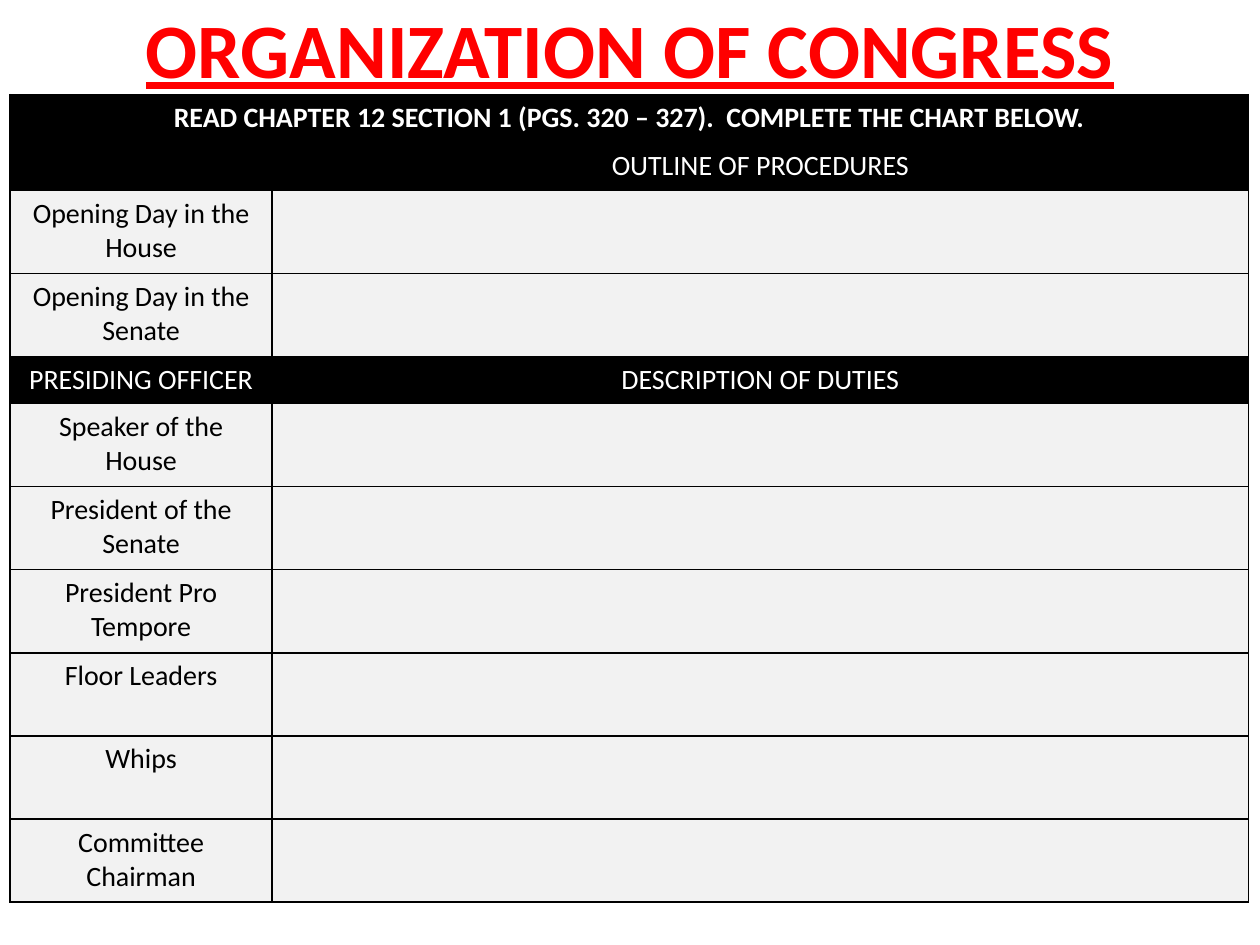
"""Build the Organization of Congress worksheet slide."""
from lxml.etree import SubElement as Sub
from pptx import Presentation
from pptx.dml.color import RGBColor
from pptx.enum.text import MSO_ANCHOR as Anchor, PP_ALIGN as Align
from pptx.oxml.ns import qn
from pptx.util import Inches, Pt


def style(par, size, color, bold):
    """Centre a paragraph and set its font."""
    par.alignment = Align.CENTER
    font = par.font
    font.name, font.size, font.bold = "Calibri", Pt(size), bold
    font.color.rgb = RGBColor.from_string(color)


def border(cell, color):
    """Draw a one-point line on each side of a cell."""
    props = cell._tc.get_or_add_tcPr()
    for side in ("lnL", "lnR", "lnT", "lnB"):
        line = Sub(props, qn(f"a:{side}"), w=str(Pt(1)))
        fill = Sub(line, qn("a:solidFill"))
        Sub(fill, qn("a:srgbClr"), val=color)


BLACK, WHITE, GRAY, RED = "000000", "FFFFFF", "F2F2F2", "FF0000"

deck = Presentation()
deck.slide_width, deck.slide_height = Inches(10), Inches(7.5)
slide = deck.slides.add_slide(deck.slide_layouts[5])

title = slide.shapes.title
title.left, title.top = Inches(0), Inches(0)
title.width, title.height = Inches(10), Inches(0.75)
frame = title.text_frame
frame.text = "ORGANIZATION OF CONGRESS"
frame.vertical_anchor = Anchor.MIDDLE
style(frame.paragraphs[0], 44, RED, True)
frame.paragraphs[0].font.underline = True

rows = [
    ("READ CHAPTER 12 SECTION 1 (PGS. 320 – 327).  COMPLETE THE CHART BELOW.", ""),
    ("", "OUTLINE OF PROCEDURES"),
    ("Opening Day in the House", ""),
    ("Opening Day in the Senate", ""),
    ("PRESIDING OFFICER", "DESCRIPTION OF DUTIES"),
    ("Speaker of the House", ""),
    ("President of the Senate", ""),
    ("President Pro Tempore", ""),
    ("Floor Leaders", ""),
    ("Whips", ""),
    ("Committee\nChairman", ""),
]
heads = {0: 0.38, 1: 0.38, 4: 0.37}

table = slide.shapes.add_table(
    len(rows), 2, Inches(0.08), Inches(0.75), Inches(9.83), Inches(6.4)
).table
for col, width in zip(table.columns, (2.08, 7.75)):
    col.width = Inches(width)
table.cell(0, 0).merge(table.cell(0, 1))

for r, texts in enumerate(rows):
    table.rows[r].height = Inches(heads.get(r, 0.66))
    back, ink = (BLACK, WHITE) if r in heads else (GRAY, BLACK)
    for c, text in enumerate(texts):
        cell = table.cell(r, c)
        border(cell, BLACK)
        cell.fill.solid()
        cell.fill.fore_color.rgb = RGBColor.from_string(back)
        cell.text = text
        for par in cell.text_frame.paragraphs:
            style(par, 16, ink, r == 0)

deck.save("out.pptx")
